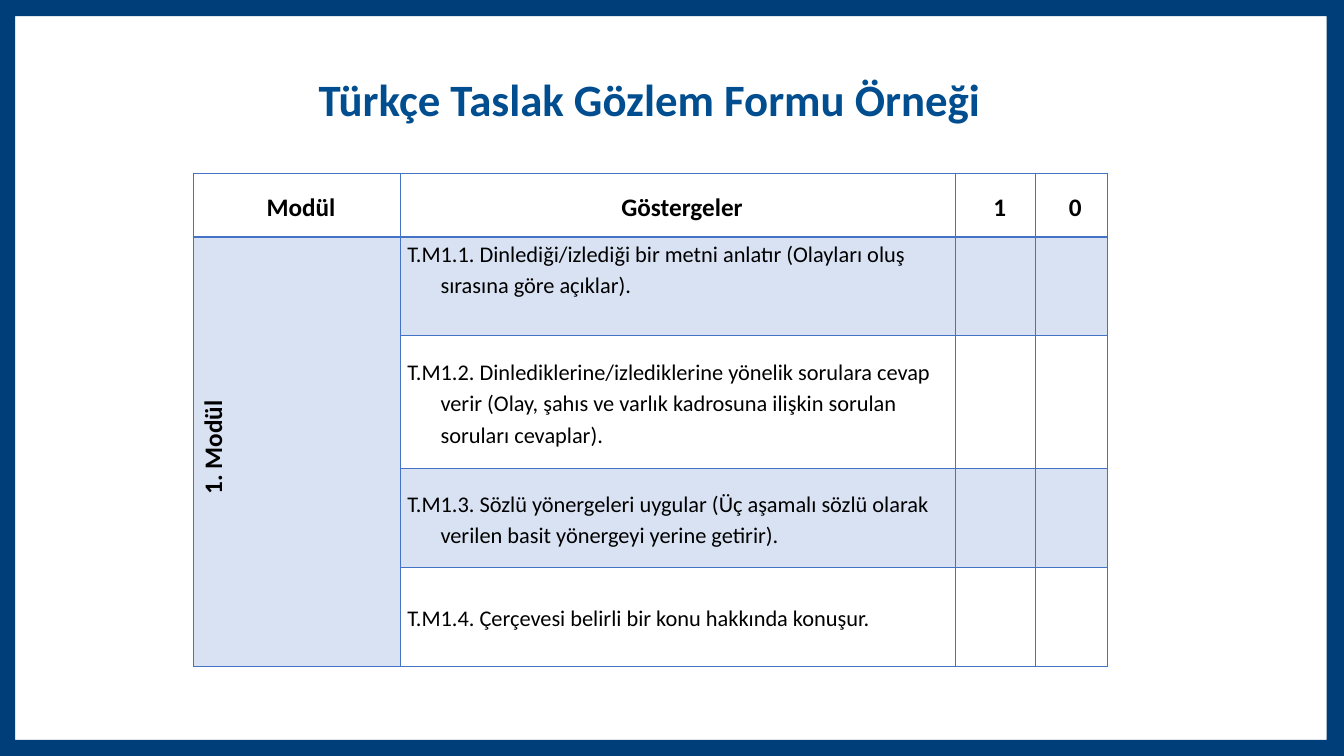
from dataclasses import dataclass

from lxml.etree import SubElement
from pptx import Presentation
from pptx.dml.color import RGBColor
from pptx.enum.text import MSO_ANCHOR, MSO_AUTO_SIZE, PP_ALIGN
from pptx.oxml import parse_xml
from pptx.oxml.ns import nsdecls, qn
from pptx.util import Inches, Pt

WIDE, HIGH = Inches(13.33), Inches(7.5)


@dataclass(frozen=True)
class Theme:
    font: str = "Calibri"
    title: str = "004E8F"
    frame: str = "003E7A"
    line: str = "4472C4"
    text: str = "000000"
    tint: int = 20
    big: int = 32
    head: int = 18
    body: int = 16


THEME = Theme()
TITLE = "Türkçe Taslak Gözlem Formu Örneği"
HEADS = ["Modül", "Göstergeler", "1", "0"]
MODULE = "1. Modül"
ITEMS = [
    "T.M1.1. Dinlediği/izlediği bir metni anlatır (Olayları oluş sırasına göre açıklar).",
    "T.M1.2. Dinlediklerine/izlediklerine yönelik sorulara cevap verir "
    "(Olay, şahıs ve varlık kadrosuna ilişkin sorulan soruları cevaplar).",
    "T.M1.3. Sözlü yönergeleri uygular (Üç aşamalı sözlü olarak verilen basit yönergeyi yerine getirir).",
    "T.M1.4. Çerçevesi belirli bir konu hakkında konuşur.",
]
# Column and row sizes in percent of the slide
COLS = [15.38, 41.34, 5.93, 5.33]
ROWS = [8.4, 13.07, 17.6, 13.07, 13.07]


def across(share):
    return int(WIDE * share / 100)


def down(share):
    return int(HIGH * share / 100)


def apply(item, form):
    for name, value in form.items():
        setattr(item, name, value)


def style(para, size, color, bold=True, align=PP_ALIGN.LEFT):
    para.alignment = align
    apply(para.font, {"name": THEME.font, "size": Pt(size), "bold": bold})
    para.font.color.rgb = RGBColor.from_string(color)


def add_title(slide):
    title = slide.shapes.title
    apply(title, {"left": across(22.96), "top": down(8.8),
                  "width": across(56.64), "height": down(8.53)})
    frame = title.text_frame
    apply(frame, {"text": TITLE, "auto_size": MSO_AUTO_SIZE.NONE,
                  "word_wrap": True, "vertical_anchor": MSO_ANCHOR.MIDDLE})
    style(frame.paragraphs[0], THEME.big, THEME.title)


def add_frame(slide):
    """Draw the border of the slide as an outer outline with a hole."""
    left, top, right, foot = across(1.13), down(2.13), across(98.72), down(97.87)
    pen = slide.shapes.build_freeform(0, 0)
    pen.add_line_segments([(WIDE, 0), (WIDE, HIGH), (0, HIGH)])
    pen.move_to(left, top)
    pen.add_line_segments([(left, foot), (right, foot), (right, top)])
    frame = pen.convert_to_shape()
    frame.shadow.inherit = False
    frame.fill.solid()
    frame.fill.fore_color.rgb = RGBColor.from_string(THEME.frame)
    frame.line.fill.background()


def paint(cell, tinted):
    if not tinted:
        cell.fill.background()
        return
    cell.fill.solid()
    cell.fill.fore_color.rgb = RGBColor.from_string(THEME.line)
    color = cell._tc.tcPr.find(qn("a:solidFill"))[0]
    SubElement(color, qn("a:alpha")).set("val", str(THEME.tint * 1000))


def rule(cell, base):
    """Line all four sides of a cell; base is the width at the bottom."""
    for spot, (side, width) in enumerate(zip("LRTB", [1, 1, 1, base])):
        cell._tc.tcPr.insert(spot, parse_xml(
            f'<a:ln{side} {nsdecls("a")} w="{Pt(width)}"><a:solidFill>'
            f'<a:srgbClr val="{THEME.line}"/></a:solidFill></a:ln{side}>'))


def write(cell, text, head=True, anchor=MSO_ANCHOR.MIDDLE):
    apply(cell, {"text": text, "vertical_anchor": anchor,
                 "margin_left": Inches(0.07), "margin_right": Inches(0.07),
                 "margin_top": 0, "margin_bottom": 0})
    para = cell.text_frame.paragraphs[0]
    para.line_spacing = 1.15
    style(para, THEME.head if head else THEME.body, THEME.text, head,
          PP_ALIGN.CENTER if head else PP_ALIGN.LEFT)
    left, indent = (0.08, 0) if head else (0.33, -0.33)
    props = para._p.get_or_add_pPr()
    props.set("marL", str(Inches(left)))
    props.set("indent", str(Inches(indent)))


def add_form(slide):
    table = slide.shapes.add_table(
        len(ROWS), len(COLS), across(14.4), down(22.93),
        across(sum(COLS)), down(sum(ROWS))).table
    apply(table, {"first_row": False, "horz_banding": False})
    for col, share in zip(table.columns, COLS):
        col.width = across(share)
    for row, share in zip(table.rows, ROWS):
        row.height = down(share)
    for y in range(len(ROWS)):
        for x in range(len(COLS)):
            cell = table.cell(y, x)
            paint(cell, y % 2 == 1)
            rule(cell, 1 if y else 2)
    for x, text in enumerate(HEADS):
        write(table.cell(0, x), text)
    for y, text in enumerate(ITEMS, 1):
        anchor = MSO_ANCHOR.TOP if y == 1 else MSO_ANCHOR.MIDDLE
        write(table.cell(y, 1), text, False, anchor)
    module = table.cell(1, 0)
    module.merge(table.cell(len(ITEMS), 0))
    write(module, MODULE)
    module._tc.tcPr.set("vert", "vert270")


def main():
    deck = Presentation()
    apply(deck, {"slide_width": WIDE, "slide_height": HIGH})
    slide = deck.slides.add_slide(deck.slide_layouts[5])
    add_title(slide)
    add_frame(slide)
    add_form(slide)
    deck.save("out.pptx")


if __name__ == "__main__":
    main()
